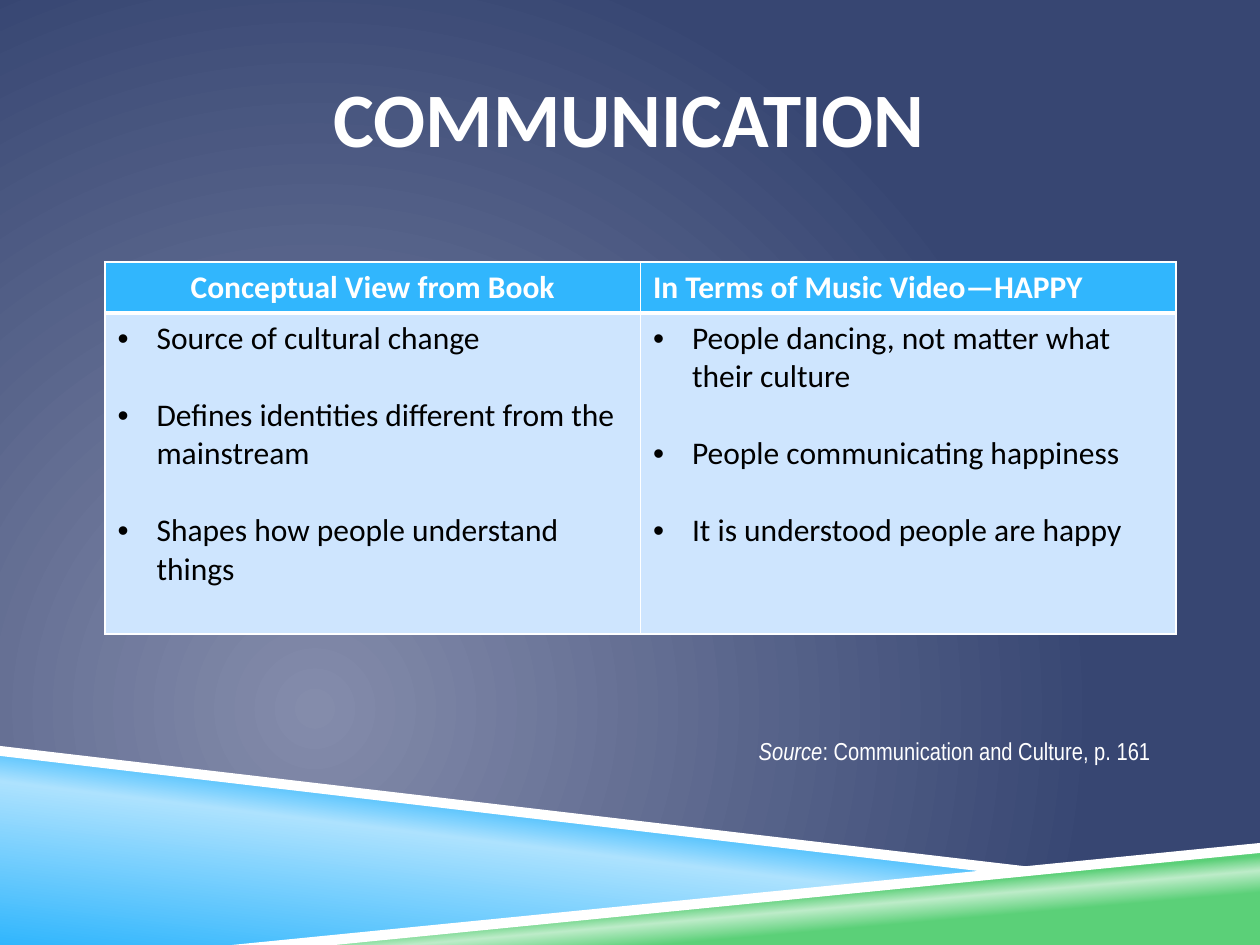
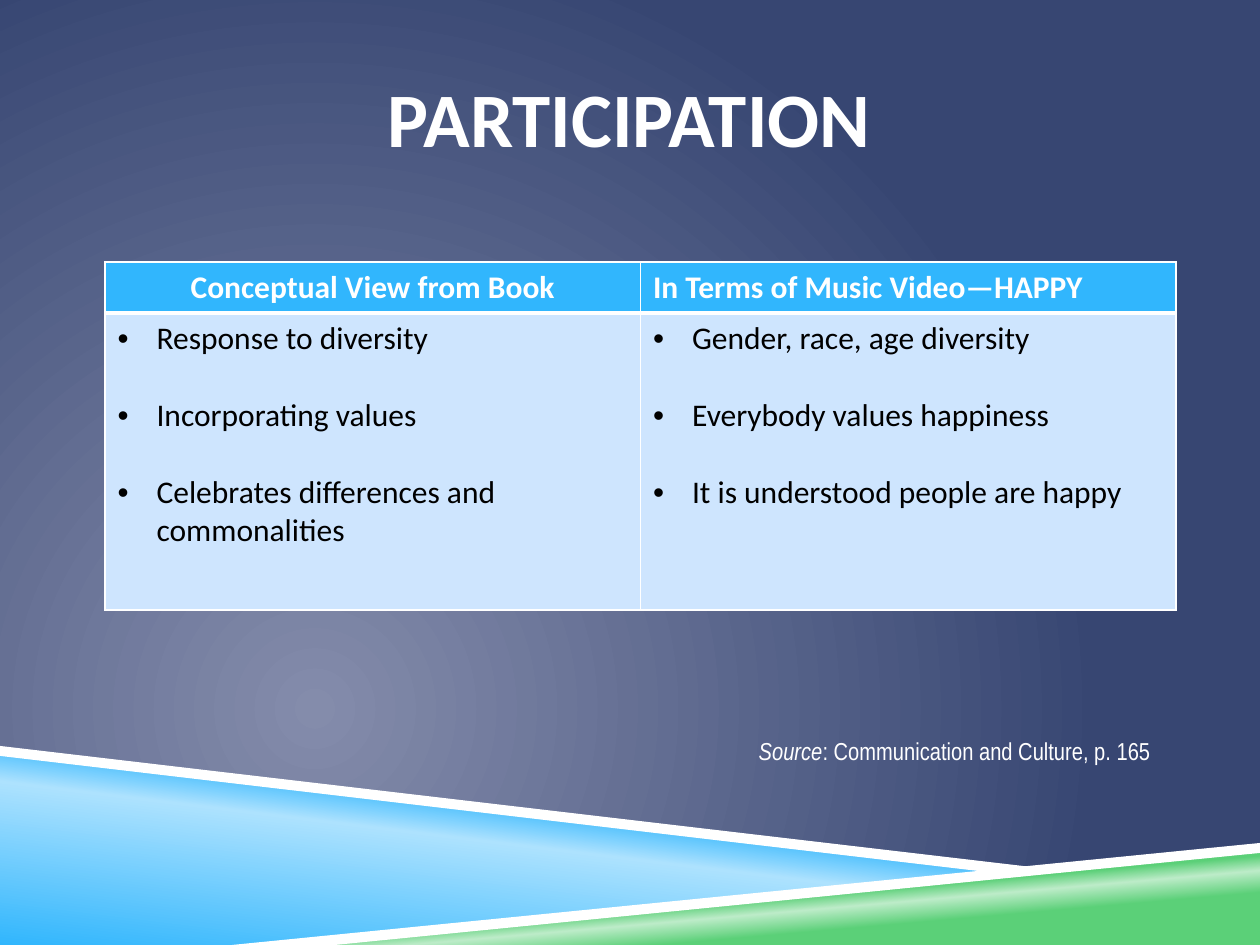
from pptx import Presentation
from pptx import util as u
from pptx.dml.color import RGBColor
from pptx.enum import text
from pptx.oxml import parse_xml
from pptx.oxml.ns import nsdecls

PX = 914400 / 126
WIDTH, HEIGHT = 1260, 945

WHITE = RGBColor(0xFF, 0xFF, 0xFF)
BLACK = RGBColor(0x00, 0x00, 0x00)
NAVY = RGBColor(0x37, 0x46, 0x72)
HAZE = RGBColor(0x84, 0x8C, 0xAB)
BLUE = RGBColor(0x31, 0xB6, 0xFD)
LIGHT_BLUE = RGBColor(0xAD, 0xE2, 0xFE)
GREEN = RGBColor(0x5B, 0xD0, 0x78)
LIGHT_GREEN = RGBColor(0xBD, 0xEC, 0xC9)
CELL_BLUE = RGBColor(0xCE, 0xE5, 0xFE)

BODY_FONT = "Calibri"
SOURCE_FONT = "Arial Narrow"
HEADINGS = ["Conceptual View from Book", "In Terms of Music Video—HAPPY"]
HEADER_HEIGHT = 51
BULLET_INDENT = 39

CIRCLE = ('<a:path path="circle"><a:fillToRect l="50000" t="100000" '
          'r="100000" b="50000"/></a:path>')


def px(length):
    return u.Emu(round(length * PX))


def linear(degrees):
    return f'<a:lin ang="{degrees * 60000}" scaled="0"/>'


def set_gradient(fill, element, stops, direction):
    fill.solid()
    solid = element.xpath(".//a:solidFill")[0]
    stop_xml = "".join(
        f'<a:gs pos="{position * 1000}"><a:srgbClr val="{color}"/></a:gs>'
        for position, color in stops)
    gradient = parse_xml(
        f'<a:gradFill {nsdecls("a")} rotWithShape="1">'
        f'<a:gsLst>{stop_xml}</a:gsLst>{direction}</a:gradFill>')
    solid.getparent().replace(solid, gradient)


def add_band(slide, points):
    builder = slide.shapes.build_freeform(*points[0], scale=PX)
    builder.add_line_segments(points[1:], close=True)
    shape = builder.convert_to_shape()
    shape.shadow.inherit = False
    shape.line.fill.background()
    return shape


def add_backdrop(slide):
    set_gradient(slide.background.fill, slide.element,
                 [(0, HAZE), (100, NAVY)], CIRCLE)
    blue_band = add_band(slide, [(0, 752), (998, 872), (252, HEIGHT), (0, HEIGHT)])
    set_gradient(blue_band.fill, blue_band.element,
                 [(0, BLUE), (52, LIGHT_BLUE), (66, BLUE)], linear(277))
    green_band = add_band(slide, [(249, HEIGHT), (WIDTH, 847), (WIDTH, HEIGHT)])
    set_gradient(green_band.fill, green_band.element,
                 [(28, GREEN), (40, LIGHT_GREEN), (48, GREEN)], linear(265))
    for edge in ([(0, 746), (0, 756), (995, 873), (1048, 869)],
                 [(WIDTH, 843), (232, HEIGHT), (335, HEIGHT), (WIDTH, 853)]):
        stripe = add_band(slide, edge)
        stripe.fill.solid()
        stripe.fill.fore_color.rgb = WHITE


def add_run(paragraph, words, size, color, font=BODY_FONT, bold=False, italic=False):
    run = paragraph.add_run()
    run.text = words
    run.font.name = font
    run.font.size = u.Pt(size)
    run.font.color.rgb = color
    run.font.bold = bold
    run.font.italic = italic


def add_text_box(slide, left, top, width, height, alignment):
    box = slide.shapes.add_textbox(px(left), px(top), px(width), px(height))
    frame = box.text_frame
    frame.word_wrap = True
    frame.paragraphs[0].alignment = alignment
    return frame


def add_title(slide, title):
    frame = add_text_box(slide, 94, 38, 1071, 158, text.PP_ALIGN.CENTER)
    frame.vertical_anchor = text.MSO_ANCHOR.MIDDLE
    frame.margin_left = frame.margin_right = 0
    add_run(frame.paragraphs[0], title, 44, WHITE, bold=True)


def add_source(slide, page):
    frame = add_text_box(slide, 451, 730, 712, 43, text.PP_ALIGN.RIGHT)
    paragraph = frame.paragraphs[0]
    add_run(paragraph, "Source", 14, WHITE, SOURCE_FONT, italic=True)
    add_run(paragraph, f": Communication and Culture, p. {page}", 14, WHITE, SOURCE_FONT)


def style_cell(cell, color, top=1, bottom=1):
    cell.fill.solid()
    cell.fill.fore_color.rgb = color
    properties = cell._tc.get_or_add_tcPr()
    sides = [("L", 1), ("R", 1), ("T", top), ("B", bottom)]
    for index, (side, points) in enumerate(sides):
        properties.insert(index, parse_xml(
            f'<a:ln{side} {nsdecls("a")} w="{u.Pt(points)}"><a:solidFill>'
            f'<a:srgbClr val="{WHITE}"/></a:solidFill></a:ln{side}>'))


def add_bullets(frame, items):
    for index, item in enumerate(items):
        paragraph = frame.add_paragraph() if index else frame.paragraphs[0]
        properties = paragraph._p.get_or_add_pPr()
        properties.set("marL", str(px(BULLET_INDENT)))
        properties.set("indent", str(-px(BULLET_INDENT)))
        properties.append(parse_xml(f'<a:buFont {nsdecls("a")} typeface="Arial"/>'))
        properties.append(parse_xml(f'<a:buChar {nsdecls("a")} char="•"/>'))
        if index:
            paragraph.space_before = u.Pt(22)
        add_run(paragraph, item, 18, BLACK)


def add_comparison(slide, columns, body_height):
    table = slide.shapes.add_table(
        2, 2, px(105), px(262), px(1071), px(HEADER_HEIGHT + body_height)).table
    table.first_row = table.horz_banding = False
    table.rows[0].height = px(HEADER_HEIGHT)
    table.rows[1].height = px(body_height)
    for index, (heading, items) in enumerate(zip(HEADINGS, columns)):
        header, body = table.cell(0, index), table.cell(1, index)
        style_cell(header, BLUE, bottom=3)
        style_cell(body, CELL_BLUE, top=3)
        add_run(header.text_frame.paragraphs[0], heading, 18, WHITE, bold=True)
        add_bullets(body.text_frame, items)
    table.cell(0, 0).text_frame.paragraphs[0].alignment = text.PP_ALIGN.CENTER


def add_topic_slide(presentation, title, columns, body_height, page):
    slide = presentation.slides.add_slide(presentation.slide_layouts[6])
    add_backdrop(slide)
    add_title(slide, title)
    add_comparison(slide, columns, body_height)
    add_source(slide, page)


def main():
    presentation = Presentation()
    presentation.slide_width = px(WIDTH)
    presentation.slide_height = px(HEIGHT)
    add_topic_slide(presentation, "COMMUNICATION", [
        ["Source of cultural change",
         "Defines identities different from the mainstream",
         "Shapes how people understand things"],
        ["People dancing, not matter what their culture",
         "People communicating happiness",
         "It is understood people are happy"],
    ], 321, 161)
    add_topic_slide(presentation, "PARTICIPATION", [
        ["Response to diversity",
         "Incorporating values",
         "Celebrates differences and commonalities"],
        ["Gender, race, age diversity",
         "Everybody values happiness",
         "It is understood people are happy"],
    ], 297, 165)
    presentation.save("out.pptx")


if __name__ == "__main__":
    main()
